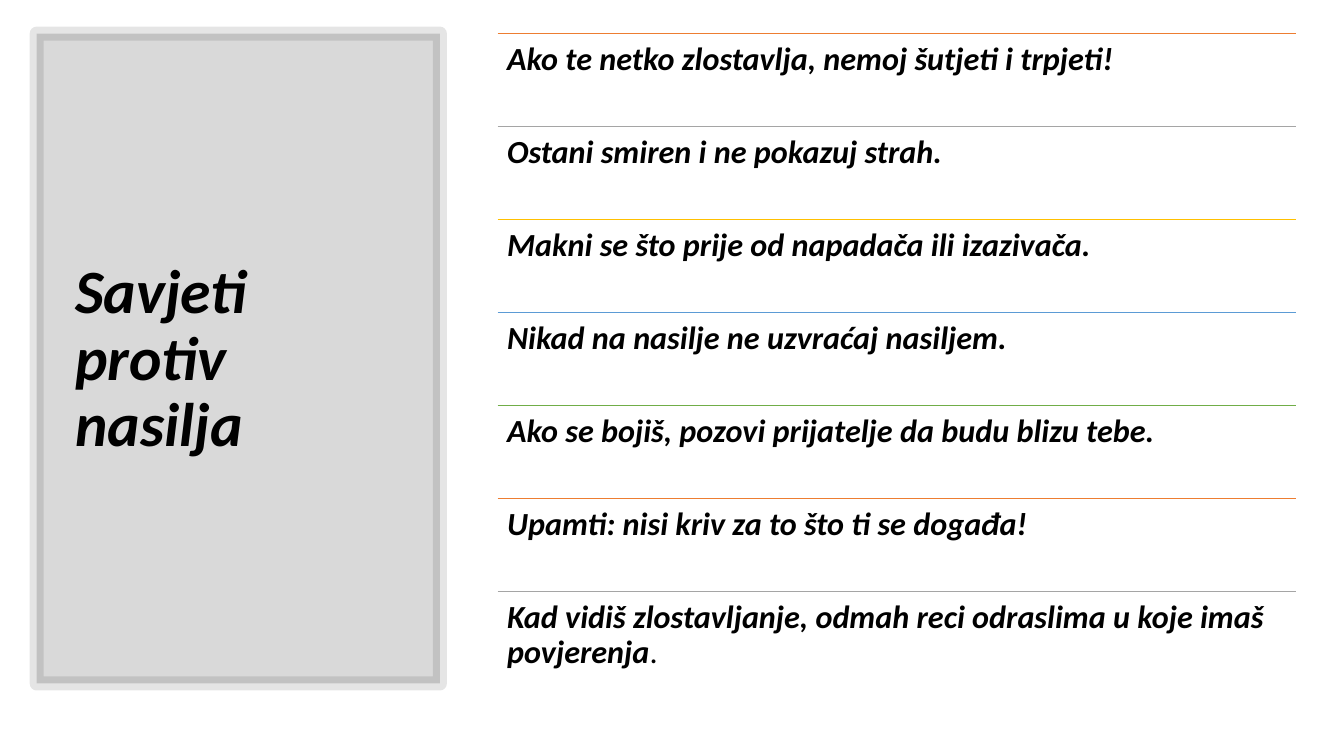
from dataclasses import dataclass

from lxml.etree import SubElement
from pptx import Presentation
from pptx.dml.color import RGBColor
from pptx.enum.shapes import MSO_CONNECTOR, MSO_SHAPE
from pptx.enum.text import MSO_ANCHOR, MSO_AUTO_SIZE, PP_ALIGN
from pptx.oxml.ns import qn
from pptx.util import Pt

EMU_PER_PX = 9525


@dataclass(frozen=True)
class Theme:
    font: str = "Calibri"
    ink: str = "000000"
    title_size: int = 44
    advice_size: int = 23
    rule_width: int = 1
    frame_width: int = 10
    panel_opacity: int = 15
    frame_opacity: int = 10
    rules: tuple = ("ED7D31", "A5A5A5", "FFC000", "5B9BD5", "70AD47")


THEME = Theme()

TITLE = "Savjeti protiv nasilja"
# Each piece of advice is a bold italic text and an optional plain ending
ADVICE = [
    ("Ako te netko zlostavlja, nemoj šutjeti i trpjeti!", ""),
    ("Ostani smiren i ne pokazuj strah.", ""),
    ("Makni se što prije od napadača ili izazivača.", ""),
    ("Nikad na nasilje ne uzvraćaj nasiljem.", ""),
    ("Ako se bojiš, pozovi prijatelje da budu blizu tebe.", ""),
    ("Upamti: nisi kriv za to što ti se događa!", ""),
    ("Kad vidiš zlostavljanje, odmah reci odraslima u koje imaš povjerenja", "."),
]


def px(*lengths):
    return [round(length * EMU_PER_PX) for length in lengths]


def set_color(fill, color, opacity=100):
    fill.solid()
    fill.fore_color.rgb = RGBColor.from_string(color)
    if opacity < 100:
        # The fill's XML is reached from the shape properties by the caller's element
        return opacity * 1000
    return None


def set_opacity(solid_fill, percent):
    SubElement(solid_fill[0], qn("a:alpha"), val=str(percent * 1000))


def add_span(para, text, size, strong=True):
    span = para.add_run()
    span.text = text
    font = span.font
    font.name, font.size = THEME.font, Pt(size)
    font.bold = font.italic = strong
    font.color.rgb = RGBColor.from_string(THEME.ink)


def write_text(box, text, ending="", size=THEME.advice_size, anchor=MSO_ANCHOR.TOP):
    frame = box.text_frame
    frame.word_wrap = True
    frame.auto_size = MSO_AUTO_SIZE.NONE
    frame.vertical_anchor = anchor
    para = frame.paragraphs[0]
    para.alignment = PP_ALIGN.LEFT
    para.line_spacing = 0.9
    add_span(para, text, size)
    if ending:
        add_span(para, ending, size, strong=False)


def add_title_panel(page, left, top, width, height):
    # Translucent panel with a translucent frame
    panel = page.shapes.add_shape(MSO_SHAPE.RECTANGLE, *px(left, top, width, height))
    panel.shadow.inherit = False
    set_color(panel.fill, THEME.ink)
    set_color(panel.line.fill, THEME.ink)
    panel.line.width = Pt(THEME.frame_width)
    properties = panel.element.spPr
    set_opacity(properties.find(qn("a:solidFill")), THEME.panel_opacity)
    set_opacity(properties.find(qn("a:ln")).find(qn("a:solidFill")), THEME.frame_opacity)

    # Title in front of the panel
    title = page.shapes.title
    title.element.getparent().append(title.element)
    title.left, title.top, title.width, title.height = px(
        left + 27, top + 35, width - 52, height - 67)
    write_text(title, TITLE, size=THEME.title_size, anchor=MSO_ANCHOR.MIDDLE)


def add_advice_list(page, left, top, width, height):
    group = page.shapes.add_group_shape()
    row_height = height / len(ADVICE)
    for index, (text, ending) in enumerate(ADVICE):
        row_top = top + index * row_height

        # Rule above the row
        rule = group.shapes.add_connector(
            MSO_CONNECTOR.STRAIGHT, *px(left, row_top, left + width, row_top))
        set_color(rule.line.fill, THEME.rules[index % len(THEME.rules)])
        rule.line.width = Pt(THEME.rule_width)
        SubElement(rule.element.spPr, qn("a:effectLst"))

        # Advice text
        box = group.shapes.add_textbox(*px(left, row_top, width, row_height))
        frame = box.text_frame
        frame.margin_left, frame.margin_top, frame.margin_right, frame.margin_bottom = px(
            *[9] * 4)
        write_text(box, text, ending)


def main():
    deck = Presentation()
    deck.slide_width, deck.slide_height = px(1280, 720)
    title_only = deck.slide_layouts.get_by_name("Title Only")
    page = deck.slides.add_slide(title_only)
    add_title_panel(page, 35, 32, 384, 619)
    add_advice_list(page, 474, 32, 760, 620)
    deck.save("out.pptx")


if __name__ == "__main__":
    main()
